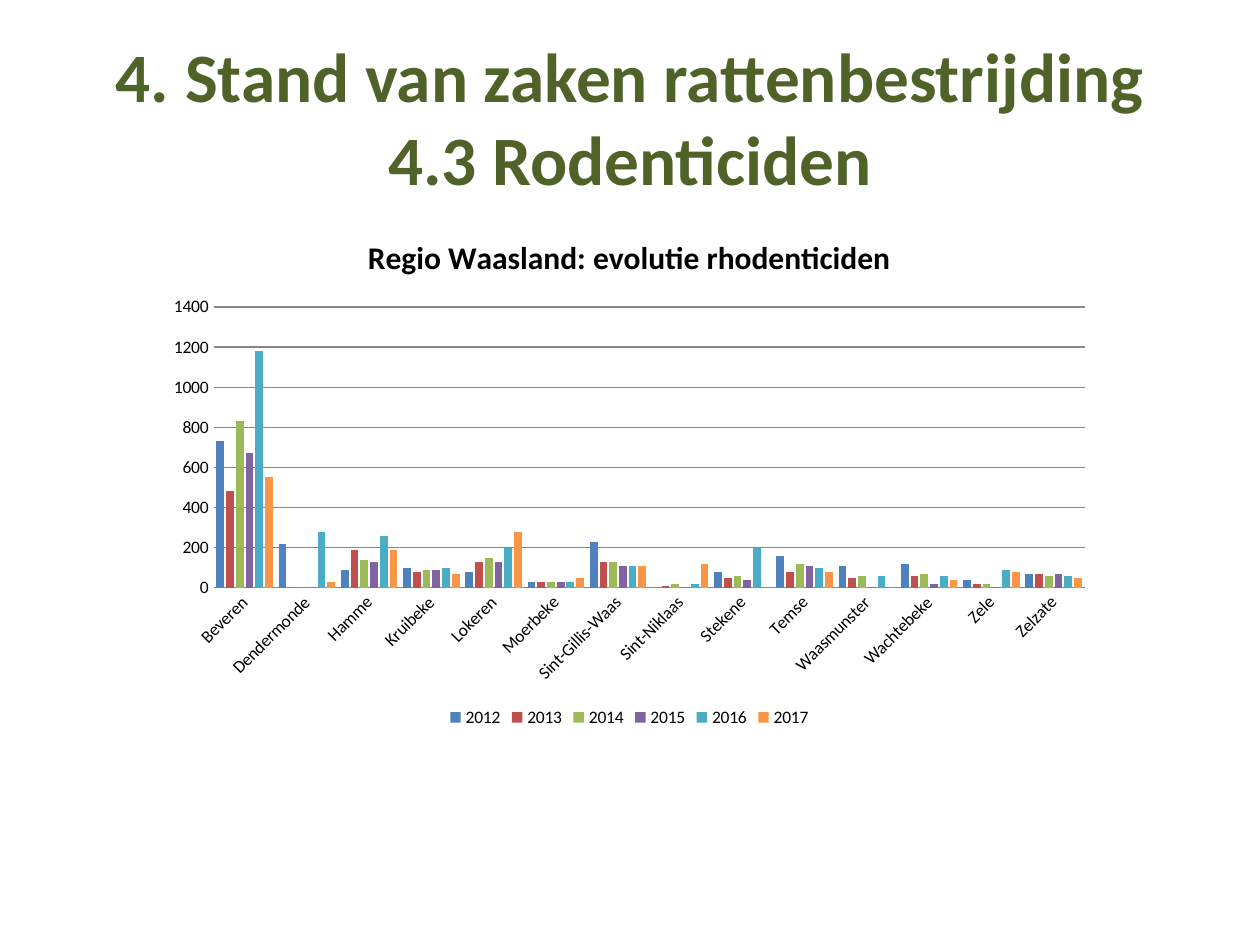
from dataclasses import dataclass

from pptx import Presentation
from pptx.chart.data import CategoryChartData
from pptx.dml.color import RGBColor
from pptx.enum.chart import XL_CHART_TYPE, XL_LEGEND_POSITION, XL_TICK_MARK
from pptx.enum.text import MSO_ANCHOR, MSO_AUTO_SIZE, PP_ALIGN
from pptx.util import Inches, Pt

CLUSTERED = XL_CHART_TYPE.COLUMN_CLUSTERED
LEGEND_BOTTOM = XL_LEGEND_POSITION.BOTTOM
NO_TICK = XL_TICK_MARK.NONE
MIDDLE = MSO_ANCHOR.MIDDLE
NO_AUTOFIT = MSO_AUTO_SIZE.NONE
CENTER = PP_ALIGN.CENTER

SLIDE_WIDTH, SLIDE_HEIGHT = Inches(10), Inches(7.5)
TITLE_ONLY_LAYOUT = 5


@dataclass(frozen=True)
class Theme:
    font: str = "Calibri"
    title_color: str = "4F6228"
    text_color: str = "000000"
    line_color: str = "868686"
    series_colors: tuple = ("4F81BD", "C0504D", "9BBB59", "8064A2", "4BACC6", "F79646")
    title_size: float = 39.6
    chart_title_size: float = 18
    chart_text_size: float = 10


THEME = Theme()

TITLE = "4. Stand van zaken rattenbestrijding 4.3 Rodenticiden"
CHART_TITLE = "Regio Waasland: evolutie rhodenticiden"
YEARS = ("2012", "2013", "2014", "2015", "2016", "2017")
USE_BY_TOWN = {
    "Beveren": (730, 480, 830, 670, 1180, 550),
    "Dendermonde": (220, 0, 0, 0, 280, 30),
    "Hamme": (90, 190, 140, 130, 260, 190),
    "Kruibeke": (100, 80, 90, 90, 100, 70),
    "Lokeren": (80, 130, 150, 130, 200, 280),
    "Moerbeke": (30, 30, 30, 30, 30, 50),
    "Sint-Gillis-Waas": (230, 130, 130, 110, 110, 110),
    "Sint-Niklaas": (0, 10, 20, 0, 20, 120),
    "Stekene": (80, 50, 60, 40, 200, 0),
    "Temse": (160, 80, 120, 110, 100, 80),
    "Waasmunster": (110, 50, 60, 0, 60, 0),
    "Wachtebeke": (120, 60, 70, 20, 60, 40),
    "Zele": (40, 20, 20, 0, 90, 80),
    "Zelzate": (70, 70, 60, 70, 60, 50),
}


def share_box(left, top, width, height):
    """Turn shares of the slide's size into a box in EMU."""
    return (int(left * SLIDE_WIDTH), int(top * SLIDE_HEIGHT),
            int(width * SLIDE_WIDTH), int(height * SLIDE_HEIGHT))


def style_font(font, size, color, bold):
    font.name = THEME.font
    font.size = Pt(size)
    font.bold = bold
    font.color.rgb = RGBColor.from_string(color)


def place_title(slide, box):
    title = slide.shapes.title
    title.left, title.top, title.width, title.height = box
    frame = title.text_frame
    frame.word_wrap = True
    frame.auto_size = NO_AUTOFIT
    frame.vertical_anchor = MIDDLE
    paragraph = frame.paragraphs[0]
    paragraph.alignment = CENTER
    run = paragraph.add_run()
    run.text = TITLE
    style_font(run.font, THEME.title_size, THEME.title_color, True)


def style_axes(chart):
    line_color = RGBColor.from_string(THEME.line_color)
    category_axis, value_axis = chart.category_axis, chart.value_axis
    for axis in (category_axis, value_axis):
        axis.major_tick_mark = NO_TICK
        axis.minor_tick_mark = NO_TICK
        style_font(axis.tick_labels.font, THEME.chart_text_size, THEME.text_color, False)
    category_axis.format.line.color.rgb = line_color
    category_axis._element.txPr.bodyPr.set("rot", "-2700000")
    value_axis.format.line.fill.background()
    value_axis.minimum_scale, value_axis.maximum_scale = 0, 1400
    value_axis.major_unit = 200
    value_axis.tick_labels.number_format = "0"
    value_axis.tick_labels.number_format_is_linked = False
    value_axis.has_major_gridlines = True
    value_axis.major_gridlines.format.line.color.rgb = line_color


def place_chart(slide, box):
    data = CategoryChartData(number_format="0")
    data.categories = list(USE_BY_TOWN)
    for year, values in zip(YEARS, zip(*USE_BY_TOWN.values())):
        data.add_series(year, values)
    chart = slide.shapes.add_chart(CLUSTERED, *box, data).chart
    style_font(chart.font, THEME.chart_text_size, THEME.text_color, False)

    chart.has_title = True
    run = chart.chart_title.text_frame.paragraphs[0].add_run()
    run.text = CHART_TITLE
    style_font(run.font, THEME.chart_title_size, THEME.text_color, True)
    chart.chart_title.include_in_layout = False

    chart.has_legend = True
    chart.legend.position = LEGEND_BOTTOM
    chart.legend.include_in_layout = False

    style_axes(chart)
    plot = chart.plots[0]
    plot.gap_width, plot.overlap = 75, -25
    plot.vary_by_categories = False
    for series, color in zip(plot.series, THEME.series_colors):
        series.format.fill.solid()
        series.format.fill.fore_color.rgb = RGBColor.from_string(color)
        series.invert_if_negative = False


def main():
    presentation = Presentation()
    presentation.slide_width, presentation.slide_height = SLIDE_WIDTH, SLIDE_HEIGHT
    slide = presentation.slides.add_slide(presentation.slide_layouts[TITLE_ONLY_LAYOUT])
    place_title(slide, share_box(0.05, 0.04, 0.9, 1 / 6))
    place_chart(slide, share_box(0.123, 0.225, 0.753, 0.55))
    presentation.save("out.pptx")


if __name__ == "__main__":
    main()
